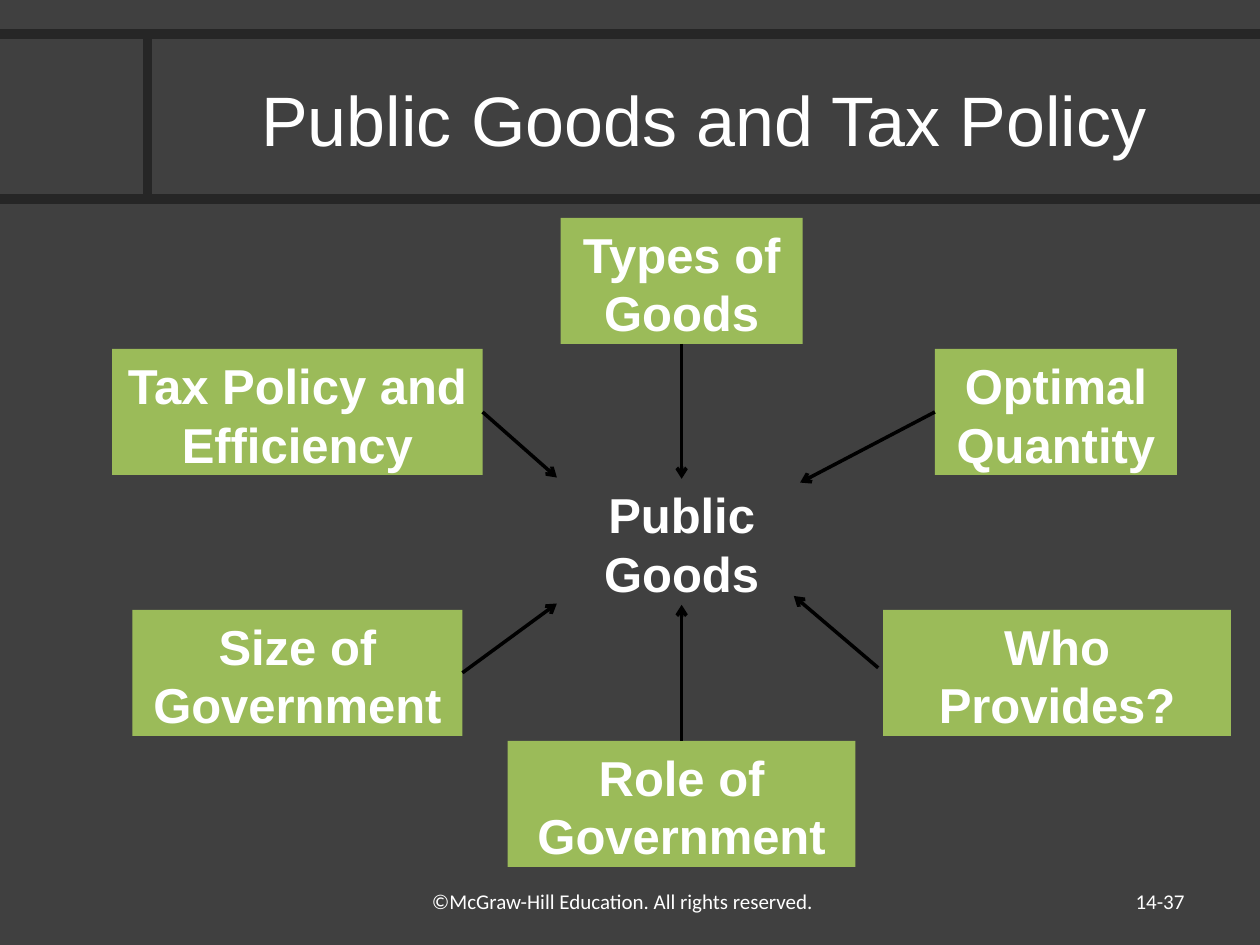
from dataclasses import dataclass
from typing import Optional

from lxml import etree
from pptx import Presentation
from pptx import util as u
from pptx.dml.color import RGBColor
from pptx.enum import shapes, text
from pptx.oxml.ns import qn

BACKGROUND, RULE, GREEN, WHITE, BLACK = "404040", "262626", "9BBB59", "FFFFFF", "000000"
TOP, LEFT, BOTTOM, RIGHT = range(4)
BOX_HEIGHT = 1
CENTER = text.PP_ALIGN.CENTER
MIDDLE = text.MSO_ANCHOR.MIDDLE


@dataclass
class Topic:
    """A green box and its arrow; without a side the arrow starts at `start`."""
    label: str
    left: float
    top: float
    width: float
    tip: tuple[float, float]
    side: Optional[int] = None
    start: tuple[float, float] = (0, 0)
    hub_side: Optional[int] = None


TOPICS = [
    Topic("Tax Policy and Efficiency", 0.89, 2.77, 2.94, (4.42, 3.79), RIGHT),
    Topic("Optimal Quantity", 7.42, 2.77, 1.92, (6.35, 3.83), LEFT),
    Topic("Types of Goods", 4.45, 1.73, 1.92, (5.41, 3.8), BOTTOM, hub_side=TOP),
    Topic("Role of Government", 4.03, 5.88, 2.76, (5.41, 4.8), TOP, hub_side=BOTTOM),
    Topic("Size of Government", 1.05, 4.84, 2.62, (4.42, 4.79), RIGHT),
    Topic("Who Provides?", 7.01, 4.84, 2.76, (6.3, 4.73), start=(6.97, 5.3)),
]


def set_color(target, value: str) -> None:
    """Color a fill, line or font."""
    if hasattr(target, "solid"):
        target.solid()
        target.fore_color.rgb = RGBColor.from_string(value)
    elif hasattr(target, "fill") and not hasattr(target, "bold"):
        set_color(target.fill, value)
    else:
        target.color.rgb = RGBColor.from_string(value)


def write(sp, content: str, size: float, font: str = "Arial", bold: bool = False,
          align=CENTER, anchor=text.MSO_ANCHOR.TOP) -> None:
    tf = sp.text_frame
    tf.word_wrap = True
    tf.vertical_anchor = anchor
    p = tf.paragraphs[0]
    p.text = content
    p.alignment = align
    p.font.name = font
    p.font.size = u.Pt(size)
    p.font.bold = bold
    set_color(p.font, WHITE)


def add_text(s, left: float, top: float, width: float, height: float,
             content: str, size: float, **style):
    sp = s.shapes.add_textbox(*map(u.Inches, (left, top, width, height)))
    write(sp, content, size, **style)
    return sp


def add_line(s, start: tuple[float, float], end: tuple[float, float],
             color: str, width: float):
    line = s.shapes.add_connector(shapes.MSO_CONNECTOR.STRAIGHT,
                                  *map(u.Inches, (*start, *end)))
    set_color(line.line, color)
    line.line.width = u.Pt(width)
    etree.SubElement(line._element.spPr, qn("a:effectLst"))
    return line


def add_box(s, topic: Topic):
    sp = s.shapes.add_shape(
        shapes.MSO_SHAPE.RECTANGLE,
        *map(u.Inches, (topic.left, topic.top, topic.width, BOX_HEIGHT)))
    sp.shadow.inherit = False
    set_color(sp.fill, GREEN)
    sp.line.fill.background()
    write(sp, topic.label, 28, bold=True)
    return sp


def add_arrow(s, topic: Topic, box, hub) -> None:
    arrow = add_line(s, topic.start, topic.tip, BLACK, 2)
    if topic.side is not None:
        arrow.begin_connect(box, topic.side)
    if topic.hub_side is not None:
        arrow.end_connect(hub, topic.hub_side)
    etree.SubElement(arrow.line._get_or_add_ln(), qn("a:tailEnd"), type="arrow")


def main() -> None:
    prs = Presentation()
    prs.slide_width, prs.slide_height = u.Inches(10), u.Inches(7.5)
    s = prs.slides.add_slide(prs.slide_layouts[6])
    set_color(s.background.fill, BACKGROUND)

    for start, end in [((0, 1.58), (10, 1.58)), ((1.17, 0.27), (1.17, 1.58)),
                       ((0, 0.27), (10, 0.27))]:
        add_line(s, start, end, RULE, 5.5)

    add_text(s, 1.17, 0.3, 8.83, 1.28, "Public Goods and Tax Policy", 40, anchor=MIDDLE)
    add_text(s, 3.33, 7, 3.33, 0.35, "©McGraw-Hill Education. All rights reserved.", 12,
             font="Calibri", align=text.PP_ALIGN.LEFT)
    add_text(s, 7.17, 6.95, 2.33, 0.4, "14-37", 12, font="Calibri",
             align=text.PP_ALIGN.RIGHT, anchor=MIDDLE)

    hub = add_text(s, 4.45, 3.8, 1.92, BOX_HEIGHT, "Public Goods", 28, bold=True)
    boxes = [add_box(s, topic) for topic in TOPICS]
    for topic, box in zip(TOPICS, boxes):
        add_arrow(s, topic, box, hub)

    prs.save("out.pptx")


if __name__ == "__main__":
    main()
